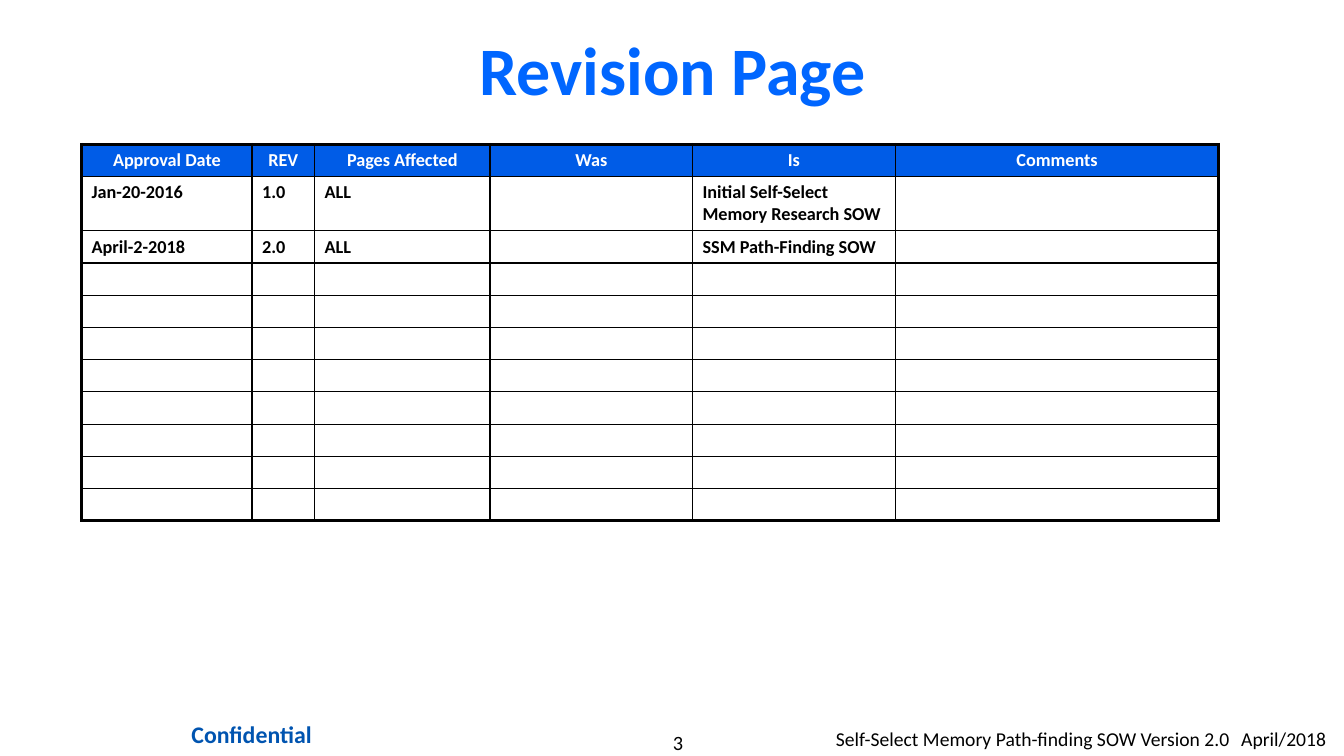
from lxml import etree
from pptx import Presentation
from pptx.dml.color import RGBColor
from pptx.enum.text import MSO_ANCHOR as Anchor, PP_ALIGN as Align
from pptx.oxml.ns import qn
from pptx.util import Inches, Pt

COLORS = {
    "title": "0066FF",
    "header": "005CE7",
    "confidential": "0054B0",
    "white": "FFFFFF",
    "black": "000000",
}


def style(paragraph, size, color, bold=False, align=Align.LEFT):
    paragraph.alignment = align
    for run in paragraph.runs:
        run.font.name = "Calibri"
        run.font.size = Pt(size)
        run.font.bold = bold
        run.font.color.rgb = RGBColor.from_string(COLORS[color])


def add_text(text, box, insets, size, color, bold=False, align=Align.CENTER):
    frame = slide.shapes.add_textbox(*map(Inches, box)).text_frame
    frame.word_wrap = True
    frame.margin_left = frame.margin_right = Inches(insets[0])
    frame.margin_top = frame.margin_bottom = Inches(insets[1])
    frame.text = text
    style(frame.paragraphs[0], size, color, bold, align)
    return frame


prs = Presentation()
prs.slide_width, prs.slide_height = Inches(13.33), Inches(7.5)
slide = prs.slides.add_slide(prs.slide_layouts[6])

# Footer
add_text("3", (5.56, 7.24, 2.33, 0.24), (0, 0), 14.5, "black")
add_text("Confidential", (1.55, 7.08, 1.89, 0.41), (0.12, 0.06), 17, "confidential", True)
document = add_text("Self-Select Memory Path-finding SOW Version 2.0\tApril/2018",
                    (8.29, 7.16, 5.05, 0.34), (0, 0.05), 14, "black", align=Align.LEFT)
tabs = etree.SubElement(document.paragraphs[0]._p.get_or_add_pPr(), qn("a:tabLst"))
etree.SubElement(tabs, qn("a:tab"), pos=str(Inches(4.02)), algn="l")

# Title
title = add_text("Revision Page", (2.17, 0.3, 9, 0.75), (0.1, 0.05), 48.5, "title", True)
title.vertical_anchor = Anchor.MIDDLE

# Revision table
headings = ["Approval Date", "REV", "Pages Affected", "Was", "Is", "Comments"]
revisions = [
    ["Jan-20-2016", "1.0", "ALL", "", "Initial Self-Select Memory Research SOW", ""],
    ["April-2-2018", "2.0", "ALL", "", "SSM Path-Finding SOW", ""],
]
blank_rows = 8
entries = [headings] + revisions + [[""] * len(headings)] * blank_rows
widths = [1.69, 0.62, 1.74, 2.01, 2.01, 3.21]
heights = [0.32, 0.54] + [0.32] * (len(entries) - 2)
last_row, last_col = len(entries) - 1, len(headings) - 1

table = slide.shapes.add_table(len(entries), len(headings), Inches(0.81), Inches(1.43),
                               Inches(sum(widths)), Inches(sum(heights))).table
table.horz_banding = False
for column, width in zip(table.columns, widths):
    column.width = Inches(width)
for row, height in zip(table.rows, heights):
    row.height = Inches(height)

for r, entry in enumerate(entries):
    for c, text in enumerate(entry):
        cell = table.cell(r, c)
        paragraph = cell.text_frame.paragraphs[0]
        if text:
            paragraph.text = text
        else:
            paragraph._p.get_or_add_endParaRPr().set("sz", "1300")
        if r == 0:
            style(paragraph, 13, "white", True, Align.CENTER)
        else:
            style(paragraph, 13, "black", True)

        # Thick outer frame, thin inner lines; borders go before the fill
        borders = cell._tc.get_or_add_tcPr()
        outer_sides = {"a:lnL": c == 0, "a:lnR": c == last_col,
                       "a:lnT": r == 0, "a:lnB": r == last_row}
        for side, outer in outer_sides.items():
            line = etree.SubElement(borders, qn(side), w=str(Pt(2.25 if outer else 1)))
            line_fill = etree.SubElement(line, qn("a:solidFill"))
            etree.SubElement(line_fill, qn("a:srgbClr"), val=COLORS["black"])
        if r == 0:
            cell.fill.solid()
            cell.fill.fore_color.rgb = RGBColor.from_string(COLORS["header"])
        else:
            cell.fill.background()

prs.save("out.pptx")
